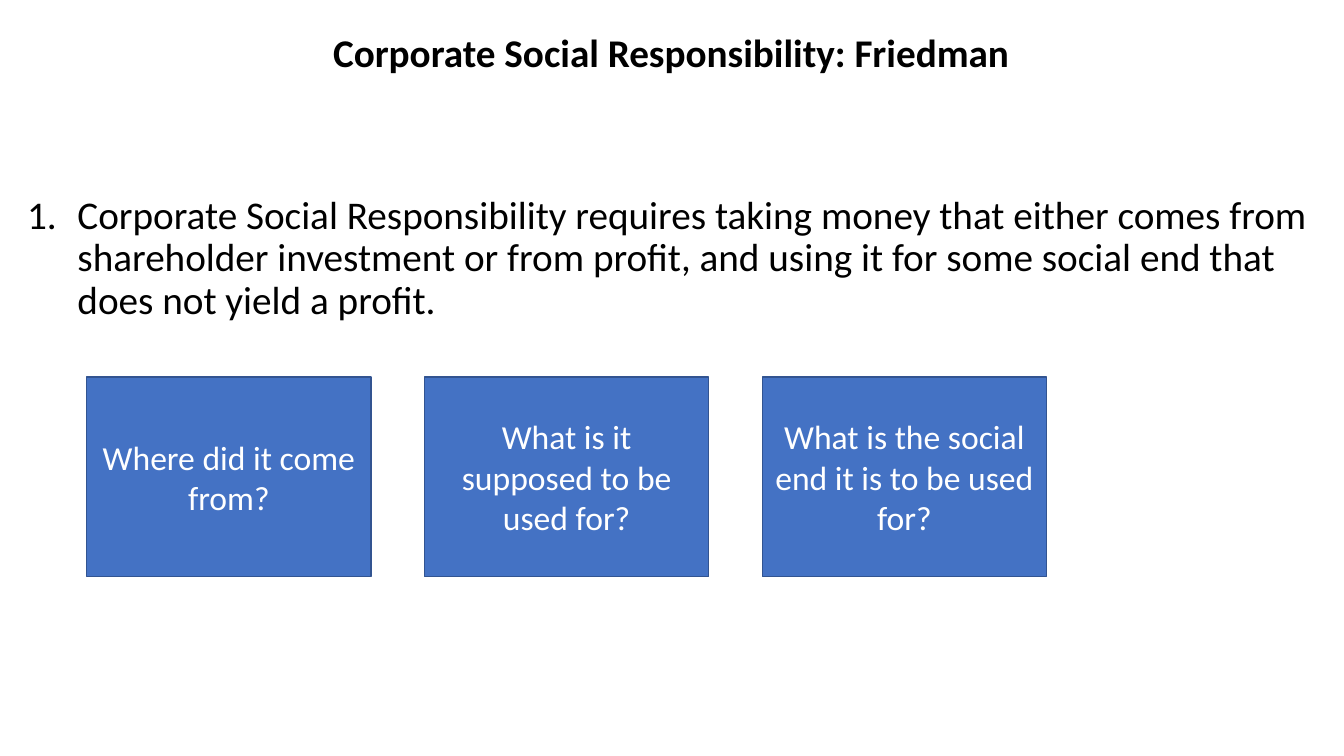
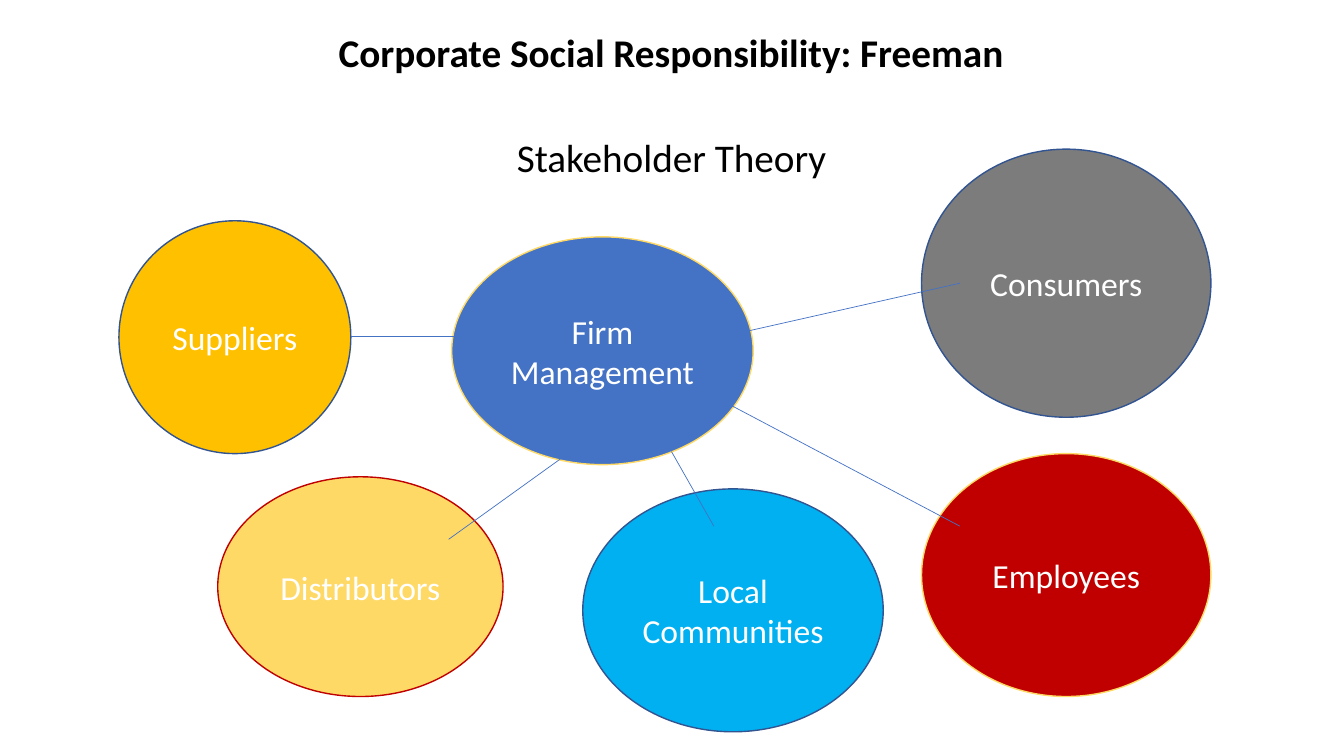
from dataclasses import dataclass
from typing import Any

from lxml import etree
from pptx import Presentation
from pptx.dml.color import RGBColor
from pptx.enum.shapes import MSO_CONNECTOR, MSO_SHAPE
from pptx.enum.text import MSO_ANCHOR, PP_ALIGN
from pptx.oxml.ns import qn
from pptx.util import Inches, Pt

RECTANGLE, OVAL = MSO_SHAPE.RECTANGLE, MSO_SHAPE.OVAL
STRAIGHT = MSO_CONNECTOR.STRAIGHT
LEFT, CENTER = PP_ALIGN.LEFT, PP_ALIGN.CENTER
TOP, MIDDLE = MSO_ANCHOR.TOP, MSO_ANCHOR.MIDDLE


@dataclass(frozen=True)
class Theme:
    """Colours, font and type sizes shared by the slides."""
    font: str = "Calibri"
    heading_size: int = 28
    label_size: int = 24
    text: str = "000000"
    label: str = "FFFFFF"
    blue: str = "4472C4"
    navy: str = "325491"
    gold: str = "FFC000"
    sand: str = "FFD966"
    gray: str = "7C7C7C"
    sky: str = "00B0F0"
    red: str = "C00000"


THEME = Theme()
TITLE_AREA = (1.81, 0.11, 9.69, 0.86)
BODY_LEFT, BODY_WIDTH = 0.17, 12.98


@dataclass(frozen=True)
class Node:
    """A filled shape with a centred label; each label line is a paragraph."""
    label: str
    area: tuple[float, float, float, float]
    fill: str
    outline: str
    kind: Any = OVAL


@dataclass(frozen=True)
class Link:
    """A straight line between two points."""
    start: tuple[float, float]
    end: tuple[float, float]


def apply(target: Any, values: dict[str, Any]) -> None:
    for name, value in values.items():
        setattr(target, name, value)


def write(frame: Any, text: str, size: int, color: str, align: Any,
          anchor: Any, bold: bool = False, spacing: float = 1.0) -> None:
    """Fill a text frame, one paragraph for each line of text."""
    apply(frame, {"word_wrap": True, "vertical_anchor": anchor})
    for index, line in enumerate(text.split("\n")):
        para = frame.add_paragraph() if index else frame.paragraphs[0]
        apply(para, {"alignment": align, "line_spacing": spacing})
        span = para.add_run()
        span.text = line
        apply(span.font, {"name": THEME.font, "size": Pt(size), "bold": bold})
        span.font.color.rgb = RGBColor.from_string(color)


def add_heading(page: Any, text: str, area: tuple[float, float, float, float],
                align: Any = CENTER, anchor: Any = TOP, bold: bool = False) -> Any:
    box = page.shapes.add_textbox(*map(Inches, area))
    write(box.text_frame, text, THEME.heading_size, THEME.text, align, anchor,
          bold, spacing=0.9)
    return box


def number_paragraph(para: Any, indent: float) -> None:
    """Give a paragraph automatic numbering with a hanging indent."""
    properties = para._p.get_or_add_pPr()
    properties.set("marL", str(Inches(indent)))
    properties.set("indent", str(-Inches(indent)))
    etree.SubElement(properties, qn("a:buAutoNum"), type="arabicPeriod")


def add_node(page: Any, node: Node) -> None:
    shape = page.shapes.add_shape(node.kind, *map(Inches, node.area))
    shape.shadow.inherit = False
    shape.fill.solid()
    shape.fill.fore_color.rgb = RGBColor.from_string(node.fill)
    shape.line.color.rgb = RGBColor.from_string(node.outline)
    shape.line.width = Pt(1)
    write(shape.text_frame, node.label, THEME.label_size, THEME.label, CENTER, MIDDLE)


def add_link(page: Any, link: Link) -> None:
    line = page.shapes.add_connector(STRAIGHT, *map(Inches, link.start + link.end))
    line.line.color.rgb = RGBColor.from_string(THEME.blue)
    line.line.width = Pt(0.5)
    etree.SubElement(line._element.spPr, qn("a:effectLst"))


def add_page(deck: Any, title: str) -> Any:
    """Add a blank slide with the shared title style."""
    page = deck.slides.add_slide(deck.slide_layouts[6])
    add_heading(page, title, TITLE_AREA, anchor=MIDDLE, bold=True)
    return page


# Friedman: a numbered claim and a row of questions
CLAIM = ("Corporate Social Responsibility requires taking money that either comes "
         "from shareholder investment or from profit, and using it for some social "
         "end that does not yield a profit.")
QUESTIONS = (
    "Where did it come from?",
    "What is it supposed to be used for?",
    "What is the social end it is to be used for?",
)
QUESTION_LEFT, QUESTION_TOP, QUESTION_STEP = 0.86, 3.74, 3.35
QUESTION_SIZE = (2.82, 1.98)

# Freeman: the firm and its stakeholders
STAKEHOLDERS = (
    Node("Firm\nManagement", (4.48, 2.35, 2.99, 2.26), THEME.blue, THEME.sand),
    Node("Consumers", (9.14, 1.48, 2.87, 2.66), THEME.gray, THEME.navy),
    Node("Suppliers", (1.18, 2.19, 2.3, 2.31), THEME.gold, THEME.navy),
    Node("Distributors", (2.16, 4.73, 2.83, 2.18), THEME.sand, THEME.red),
    Node("Local Communities", (5.78, 4.85, 2.98, 2.41), THEME.sky, THEME.navy),
    Node("Employees", (9.14, 4.5, 2.87, 2.41), THEME.red, THEME.sand),
)
LINKS = (
    Link((3.48, 3.34), (5.41, 3.34)),
    Link((4.45, 5.35), (5.91, 4.3)),
    Link((6.66, 4.48), (7.08, 5.22)),
    Link((7.17, 3.34), (9.52, 2.81)),
    Link((7.04, 3.91), (9.52, 5.22)),
)


def build_friedman(deck: Any) -> None:
    page = add_page(deck, "Corporate Social Responsibility: Friedman")
    claim = add_heading(page, CLAIM, (BODY_LEFT, 1.89, BODY_WIDTH, 1.4), LEFT)
    number_paragraph(claim.text_frame.paragraphs[0], 0.5)
    for index, question in enumerate(QUESTIONS):
        left = QUESTION_LEFT + index * QUESTION_STEP
        area = (left, QUESTION_TOP, *QUESTION_SIZE)
        add_node(page, Node(question, area, THEME.blue, THEME.navy, RECTANGLE))


def build_freeman(deck: Any) -> None:
    page = add_page(deck, "Corporate Social Responsibility: Freeman")
    add_heading(page, "Stakeholder Theory", (BODY_LEFT, 1.33, BODY_WIDTH, 0.55))
    for node in STAKEHOLDERS:
        add_node(page, node)
    for link in LINKS:
        add_link(page, link)


def main() -> None:
    deck = Presentation()
    apply(deck, {"slide_width": Inches(13.33), "slide_height": Inches(7.5)})
    build_friedman(deck)
    build_freeman(deck)
    deck.save("out.pptx")


if __name__ == "__main__":
    main()
